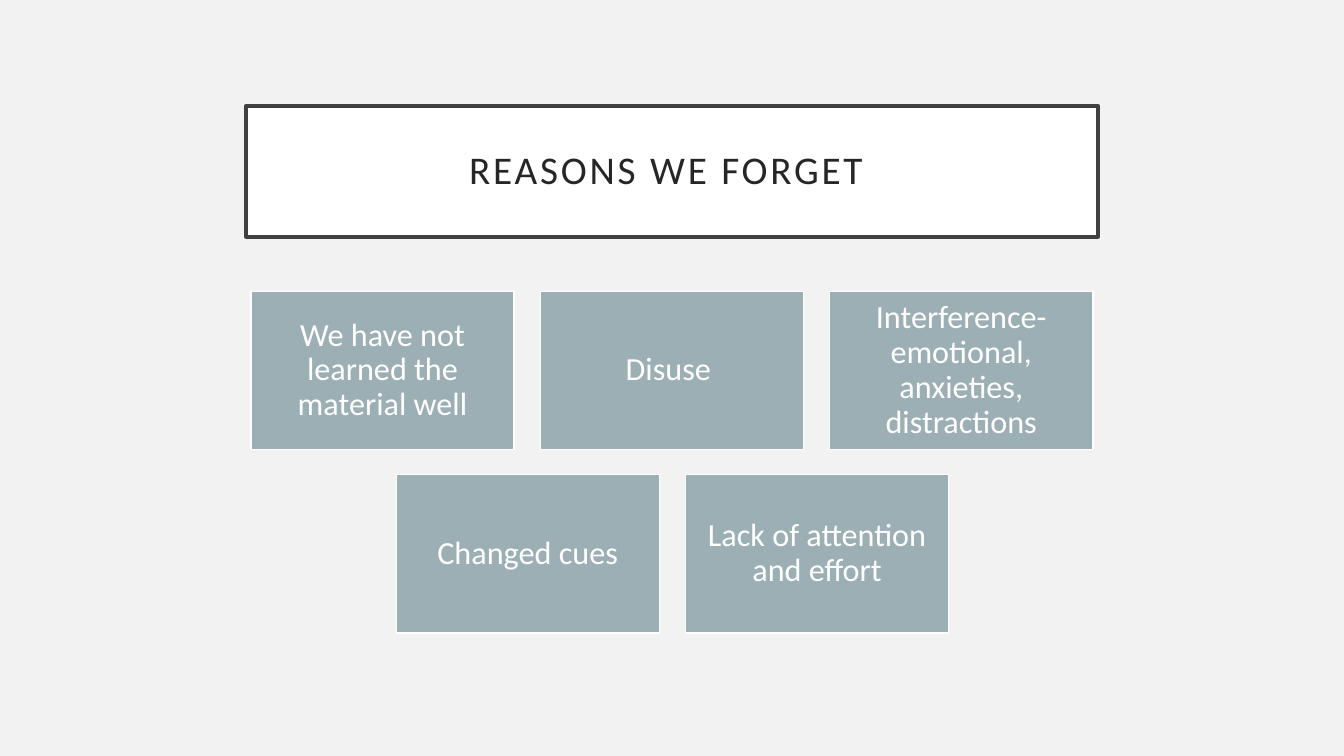
"""Build the slide on reasons we forget: a framed title above five boxes."""
from pptx import Presentation
from pptx.dml.color import RGBColor
from pptx.enum.shapes import MSO_SHAPE
from pptx.enum.text import MSO_ANCHOR, PP_ALIGN
from pptx.util import Inches, Pt

RECT = MSO_SHAPE.RECTANGLE
MIDDLE = MSO_ANCHOR.MIDDLE
CENTER = PP_ALIGN.CENTER
PAPER = RGBColor(0xF2, 0xF2, 0xF2)
WHITE = RGBColor(0xFF, 0xFF, 0xFF)
FRAME = RGBColor(0x40, 0x40, 0x40)
INK = RGBColor(0x26, 0x26, 0x26)
TEAL = RGBColor(0x9B, 0xAF, 0xB5)

WIDE, HIGH, STEP = 2.61, 1.57, 2.87
ROWS = [
    (2.49, 2.89, ["We have not learned the material well", "Disuse ",
                  "Interference- emotional, anxieties, distractions"]),
    (3.93, 4.71, ["Changed cues", "Lack of attention and effort"]),
]


def add_box(slide, place, text, fill, edge, weight, inset, size, color):
    box = slide.shapes.add_shape(RECT, *[Inches(v) for v in place])
    box.shadow.inherit = False
    box.fill.solid()
    box.fill.fore_color.rgb = fill
    box.line.color.rgb = edge
    box.line.width = Pt(weight)
    frame = box.text_frame
    frame.word_wrap = True
    frame.vertical_anchor = MIDDLE
    frame.margin_left = frame.margin_right = Inches(inset)
    frame.margin_top = frame.margin_bottom = Inches(inset)
    frame.text = text
    para = frame.paragraphs[0]
    para.alignment = CENTER
    para.line_spacing = 0.9
    font = para.runs[0].font
    font.name = "Calibri"
    font.size = Pt(size)
    font.color.rgb = color
    return box


prs = Presentation()
prs.slide_width = Inches(13.33)
prs.slide_height = Inches(7.5)
slide = prs.slides.add_slide(prs.slide_layouts[6])
slide.background.fill.solid()
slide.background.fill.fore_color.rgb = PAPER

title = add_box(slide, (2.44, 1.05, 8.45, 1.3), "REASONS WE FORGET ",
                WHITE, FRAME, 2.5, 0.2, 28, INK)
run = title.text_frame.paragraphs[0].runs[0]
run.font._element.set("spc", "200")

for left, top, labels in ROWS:
    for col, label in enumerate(labels):
        add_box(slide, (left + col * STEP, top, WIDE, HIGH), label,
                TEAL, WHITE, 1, 0.1, 23, WHITE)

prs.save("out.pptx")
